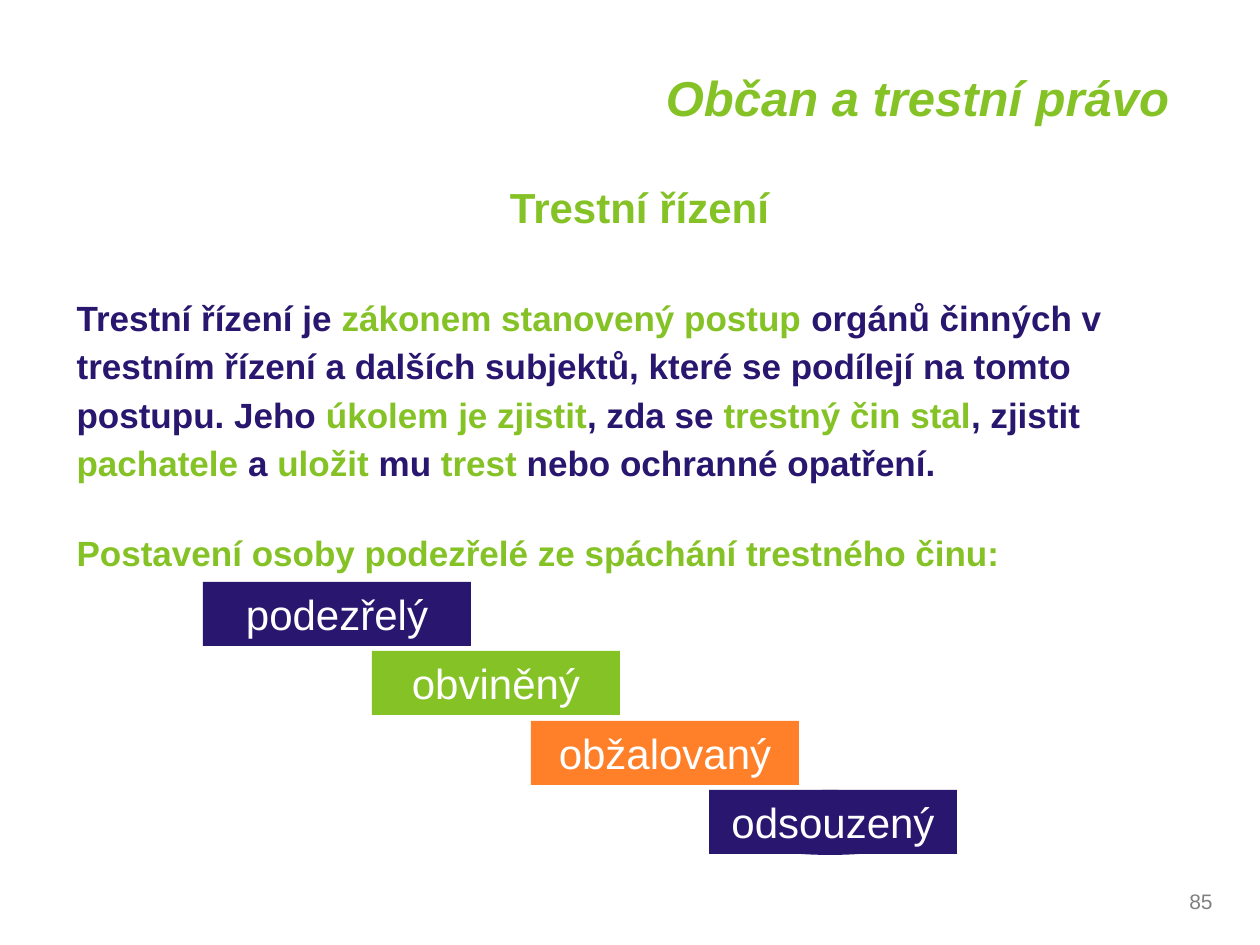
import pptx
import pptx.dml.color
import pptx.enum.shapes
import pptx.enum.text
import pptx.oxml
import pptx.util

NAVY, GREEN, ORANGE, WHITE, GRAY = "29166F", "85C226", "FF8029", "FFFFFF", "808080"
ALIGN = pptx.enum.text.PP_ALIGN
ANCHOR = pptx.enum.text.MSO_ANCHOR
SHAPE = pptx.enum.shapes.MSO_SHAPE


def px(n):
    return pptx.util.Emu(n * 914400 // 126)


def color(value):
    return pptx.dml.color.RGBColor.from_string(value)


class SlideBuilder:
    font = "Arial"

    def __init__(self, s):
        self.s = s

    def place(self, sp, box):
        sp.left, sp.top, sp.width, sp.height = map(px, box)

    def add_runs(self, p, runs, size, align, bold=False, italic=False):
        p.alignment = align
        for text, value in runs:
            r = p.add_run()
            r.text = text
            r.font.name = self.font
            r.font.size = pptx.util.Pt(size)
            r.font.bold = bold
            r.font.italic = italic
            r.font.color.rgb = color(value)

    def title(self, box, text, size):
        sp = self.s.shapes.title
        self.place(sp, box)
        tf = sp.text_frame
        tf.auto_size = pptx.enum.text.MSO_AUTO_SIZE.NONE
        tf.word_wrap = False
        tf.vertical_anchor = ANCHOR.MIDDLE
        self.add_runs(tf.paragraphs[0], [(text, GREEN)], size, ALIGN.CENTER, True, True)

    def body(self, idx, box, paragraphs, size, align, spacing=1.0, gap=0):
        sp = self.s.placeholders[idx]
        self.place(sp, box)
        tf = sp.text_frame
        tf.auto_size = pptx.enum.text.MSO_AUTO_SIZE.NONE
        for i, runs in enumerate(paragraphs):
            p = tf.add_paragraph() if i else tf.paragraphs[0]
            pPr = p._p.get_or_add_pPr()
            pPr.set("marL", "0")
            pPr.set("indent", "0")
            pPr.append(pptx.oxml.parse_xml(
                '<a:buNone xmlns:a="http://schemas.openxmlformats.org/drawingml/2006/main"/>'))
            p.line_spacing = spacing
            p.space_before = pptx.util.Pt(gap if i else 0)
            self.add_runs(p, runs, size, align, True)

    def label(self, box, text, size, value, align):
        sp = self.s.shapes.add_textbox(*map(px, box))
        tf = sp.text_frame
        tf.word_wrap = True
        tf.vertical_anchor = ANCHOR.MIDDLE
        self.add_runs(tf.paragraphs[0], [(text, value)], size, align)

    def shape(self, kind, box, fill, text="", size=24):
        sp = self.s.shapes.add_shape(kind, *map(px, box))
        sp.shadow.inherit = False
        sp.fill.solid()
        sp.fill.fore_color.rgb = color(fill)
        sp.line.fill.background()
        if text:
            tf = sp.text_frame
            tf.word_wrap = True
            tf.vertical_anchor = ANCHOR.MIDDLE
            self.add_runs(tf.paragraphs[0], [(text, WHITE)], size, ALIGN.CENTER)


def main():
    prs = pptx.Presentation()
    prs.slide_width, prs.slide_height = px(1260), px(945)
    b = SlideBuilder(prs.slides.add_slide(prs.slide_layouts[3]))

    b.title((610, 58, 615, 77), "Občan a trestní právo", 28)
    b.body(1, (54, 175, 1171, 60), [[("Trestní řízení", GREEN)]], 24, ALIGN.CENTER)
    definition = [
        ("Trestní řízení je ", NAVY),
        ("zákonem stanovený postup ", GREEN),
        ("orgánů činných v trestním řízení a dalších subjektů, "
         "které se podílejí na tomto postupu. Jeho ", NAVY),
        ("úkolem je zjistit", GREEN),
        (", zda se ", NAVY),
        ("trestný čin stal", GREEN),
        (", zjistit ", NAVY),
        ("pachatele ", GREEN),
        ("a", NAVY),
        (" uložit ", GREEN),
        ("mu", NAVY),
        (" trest ", GREEN),
        ("nebo ochranné opatření.", NAVY),
    ]
    status = [("Postavení osoby podezřelé ze spáchání trestného činu:", GREEN)]
    b.body(2, (64, 284, 1161, 556), [definition, status], 20, ALIGN.LEFT, 1.15, 24)

    stages = [
        ("podezřelý", 203, 268, NAVY),
        ("obviněný", 372, 248, GREEN),
        ("obžalovaný", 531, 268, ORANGE),
        ("odsouzený", 709, 248, NAVY),
    ]
    b.shape(SHAPE.OVAL, (709, 790, 242, 65), NAVY)
    for i, (text, left, width, fill) in enumerate(stages):
        b.shape(SHAPE.RECTANGLE, (left, 582 + i * 139 // 2, width, 64), fill, text)

    b.label((931, 876, 294, 50), "85", 12, GRAY, ALIGN.RIGHT)
    prs.save("out.pptx")


if __name__ == "__main__":
    main()
